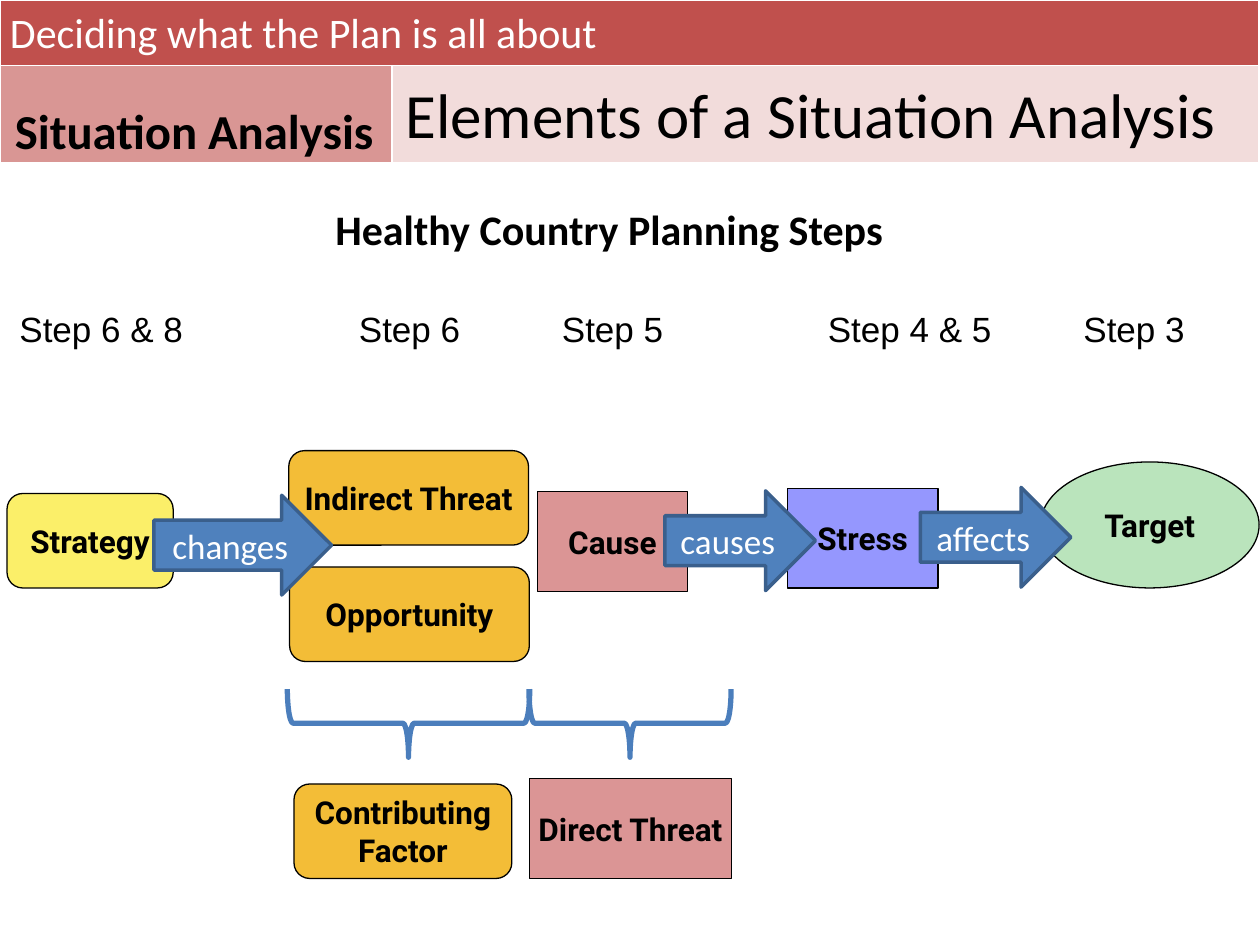
from pptx import Presentation
from pptx import util as u
from pptx.dml.color import RGBColor
from pptx.enum import shapes, text

BLACK = RGBColor(0x00, 0x00, 0x00)
WHITE = RGBColor(0xFF, 0xFF, 0xFF)
RED = RGBColor(0xC0, 0x50, 0x4D)
ROSE = RGBColor(0xD9, 0x96, 0x94)
PALE_ROSE = RGBColor(0xF2, 0xDC, 0xDB)
ORANGE = RGBColor(0xF3, 0xBD, 0x37)
GREEN = RGBColor(0xBA, 0xE4, 0xBC)
PINK = RGBColor(0xDB, 0x95, 0x95)
YELLOW = RGBColor(0xFB, 0xEF, 0x69)
VIOLET = RGBColor(0x95, 0x97, 0xFE)
BLUE = RGBColor(0x4F, 0x81, 0xBD)
DARK_BLUE = RGBColor(0x3A, 0x5F, 0x8C)
BRACE_BLUE = RGBColor(0x4B, 0x7E, 0xBC)

KIND = shapes.MSO_SHAPE
ROUNDED = KIND.FLOWCHART_ALTERNATE_PROCESS
LEFT, CENTER = text.PP_ALIGN.LEFT, text.PP_ALIGN.CENTER
TOP, MIDDLE = text.MSO_ANCHOR.TOP, text.MSO_ANCHOR.MIDDLE
FIXED, GROW = text.MSO_AUTO_SIZE.NONE, text.MSO_AUTO_SIZE.SHAPE_TO_FIT_TEXT


def points(*values):
    return [u.Pt(value) for value in values]


class SlideBuilder:
    label = dict(name="Roboto", size=u.Pt(18), bold=True)
    arrow_label = dict(name="Calibri", size=u.Pt(20), bold=False)
    step = dict(name="Arial", size=u.Pt(20), bold=False)
    heading = dict(name="Calibri", size=u.Pt(24), bold=True)
    banner = dict(name="Calibri", size=u.Pt(24), bold=False)
    section = dict(name="Calibri", size=u.Pt(27.9), bold=True)
    title = dict(name="Calibri", size=u.Pt(36), bold=False)

    def __init__(self, page):
        self.page = page

    def set_text(self, box, words, style, color=BLACK, align=CENTER, **frame_format):
        frame = box.text_frame
        frame.text = words
        for name, value in frame_format.items():
            setattr(frame, name, value)
        para = frame.paragraphs[0]
        para.alignment = align
        para.space_before = u.Pt(0)
        for name, value in style.items():
            setattr(para.font, name, value)
        para.font.color.rgb = color

    def placeholder(self, index, place, words, style, color=BLACK, align=LEFT):
        box = self.page.placeholders[index]
        box.left, box.top, box.width, box.height = points(*place)
        self.set_text(box, words, style, color, align, word_wrap=True,
                      auto_size=FIXED, vertical_anchor=TOP)

    def header_table(self, widths, heights):
        holder = self.page.shapes.add_table(
            2, 2, *points(0, 0, sum(widths), sum(heights)))
        table = holder.table
        for column, width in zip(table.columns, widths):
            column.width = u.Pt(width)
        for row, height in zip(table.rows, heights):
            row.height = u.Pt(height)
        table.cell(0, 0).merge(table.cell(0, 1))
        for row, column, color in ((0, 0, RED), (1, 0, ROSE), (1, 1, PALE_ROSE)):
            fill = table.cell(row, column).fill
            fill.solid()
            fill.fore_color.rgb = color
        # The table lies behind the placeholders
        self.page.shapes._spTree.insert(2, holder._element)

    def shape(self, kind, place, line, weight, fill=None):
        box = self.page.shapes.add_shape(kind, *points(*place))
        box.shadow.inherit = False
        if fill is None:
            box.fill.background()
        else:
            box.fill.solid()
            box.fill.fore_color.rgb = fill
        box.line.color.rgb = line
        box.line.width = u.Pt(weight)
        return box

    def node(self, kind, place, fill, words):
        box = self.shape(kind, place, BLACK, 0.75, fill)
        self.set_text(box, words, self.label, word_wrap=False, vertical_anchor=MIDDLE)

    def arrow(self, place, words):
        box = self.shape(KIND.RIGHT_ARROW, place, DARK_BLUE, 2, BLUE)
        self.set_text(box, words, self.arrow_label, WHITE, word_wrap=True,
                      vertical_anchor=MIDDLE)

    def brace(self, place):
        self.shape(KIND.LEFT_BRACE, place, BRACE_BLUE, 3).rotation = 270

    def note(self, place, words, style):
        box = self.page.shapes.add_textbox(*points(*place))
        self.set_text(box, words, style, align=LEFT, word_wrap=False, auto_size=GROW)


def main():
    deck = Presentation()
    deck.slide_width, deck.slide_height = points(720, 540)
    page = deck.slides.add_slide(deck.slide_layouts.get_by_name("Comparison"))
    for index in (2, 4):
        unused = page.placeholders[index]._element
        unused.getparent().remove(unused)
    builder = SlideBuilder(page)

    # Header band
    builder.header_table((224, 495.5), (37.5, 55.5))
    builder.placeholder(1, (-1.5, 0, 718.5, 37), "Deciding what the Plan is all about",
                        builder.banner, WHITE)
    builder.placeholder(3, (0, 54, 222, 37), "Situation Analysis",
                        builder.section, align=CENTER)
    builder.placeholder(0, (224.5, 39.5, 495.5, 51), "Elements of a Situation Analysis",
                        builder.title)

    # Chain of elements
    for node in (
        (ROUNDED, (165, 257.5, 137, 54), ORANGE, "Indirect Threat"),
        (KIND.OVAL, (594.5, 264, 125, 72), GREEN, "Target"),
        (KIND.RECTANGLE, (307, 281, 86, 57), PINK, "Cause"),
        (ROUNDED, (4, 282, 95, 54), YELLOW, "Strategy"),
        (KIND.RECTANGLE, (450, 279, 86, 57), VIOLET, "Stress"),
        (ROUNDED, (165.5, 324, 137, 54), ORANGE, "Opportunity"),
    ):
        builder.node(*node)

    # Planning steps
    for left, width, words in ((612, 73, "Step 3"), (466, 109, "Step 4 & 5"),
                               (314, 73, "Step 5"), (198, 73, "Step 6"),
                               (4, 109, "Step 6 & 8")):
        builder.note((left, 172, width, 31.5), words, builder.step)

    # Linking arrows
    for left, top, width, words in ((526, 278.5, 86, "affects"),
                                    (380, 280.5, 86, "causes"),
                                    (88, 283, 101.5, "changes")):
        builder.arrow((left, top, width, 57), words)

    builder.note((184.5, 113, 330.5, 36), "Healthy Country Planning Steps",
                 builder.heading)

    # Groups under the chain
    builder.brace((214, 344, 39, 138.5))
    builder.node(ROUNDED, (168, 448, 124.5, 54), ORANGE, "Contributing\vFactor")
    builder.brace((340.5, 355.5, 39, 115.5))
    builder.node(KIND.RECTANGLE, (302.5, 445, 115.5, 57), PINK, "Direct Threat")

    deck.save("out.pptx")


if __name__ == "__main__":
    main()
